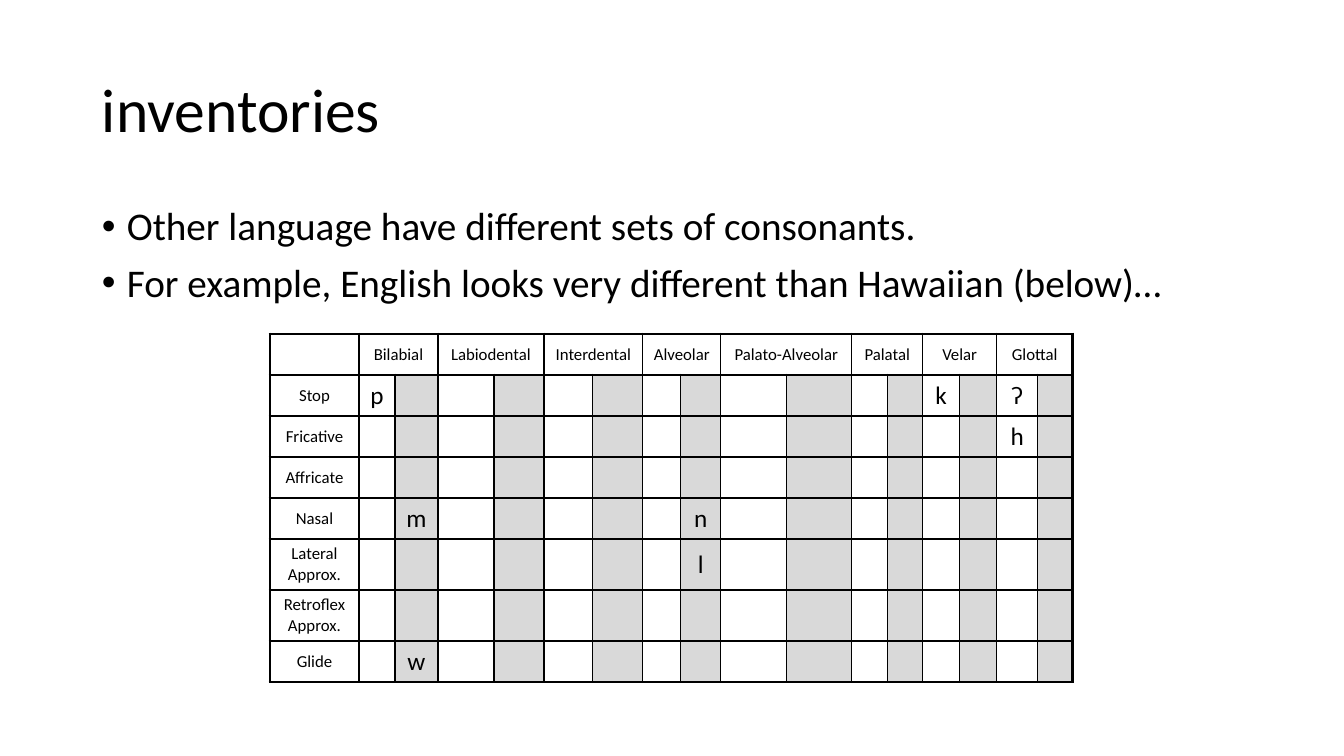
"""Build the consonant inventories slide with its Hawaiian consonant table."""
from lxml.etree import SubElement
from pptx import Presentation
from pptx.dml.color import RGBColor
from pptx.enum.text import MSO_ANCHOR as Anchor, PP_ALIGN as Align
from pptx.oxml.ns import qn
from pptx.util import Pt

PX = 9144000 / 1008
BLACK = RGBColor(0x00, 0x00, 0x00)
GREY = RGBColor(0xD9, 0xD9, 0xD9)

PLACES = ["Bilabial", "Labiodental", "Interdental", "Alveolar",
          "Palato-Alveolar", "Palatal", "Velar", "Glottal"]
MANNERS = ["Stop", "Fricative", "Affricate", "Nasal",
           "Lateral Approx.", "Retroflex Approx.", "Glide"]
SOUNDS = {(1, 1): "p", (1, 13): "k", (1, 15): "ʔ", (2, 15): "h",
          (4, 2): "m", (4, 8): "n", (5, 8): "l", (7, 2): "w"}
WIDTHS = [89, 36, 43, 56, 50, 49, 50, 38, 40, 66, 65, 36, 35, 37, 37, 41, 35]
HEIGHTS = [41, 41, 41, 41, 41, 51, 51, 41]


def px(*nums):
    return [round(num * PX) for num in nums]


def write(para, text, size, align=Align.LEFT, line=None, before=0, bullet=None):
    para.alignment = align
    para.line_spacing = line
    para.space_before = Pt(before)
    if bullet:
        props = para._p.get_or_add_pPr()
        indent, = px(25)
        props.set("marL", str(indent))
        props.set("indent", str(-indent))
        SubElement(props, qn("a:buFont"), typeface="Arial")
        SubElement(props, qn("a:buChar"), char=bullet)
    run = para.add_run()
    run.text = text
    font = run.font
    font.name, font.size, font.bold = "Calibri", Pt(size), False
    font.color.rgb = BLACK


deck = Presentation()
deck.slide_width, deck.slide_height = px(1344, 756)
slide = deck.slides.add_slide(deck.slide_layouts[6])
shapes = slide.shapes

title = shapes.add_textbox(*px(92, 40, 1159, 146)).text_frame
title.word_wrap = True
title.vertical_anchor = Anchor.MIDDLE
write(title.paragraphs[0], "inventories", 44, line=0.9)

body = shapes.add_textbox(*px(92, 202, 1159, 480)).text_frame
body.word_wrap = True
points = ["Other language have different sets of consonants.",
          "For example, English looks very different than Hawaiian (below)…"]
for num, point in enumerate(points):
    para = body.add_paragraph() if num else body.paragraphs[0]
    write(para, point, 28, line=0.9, before=10, bullet="•")

rows, cols = len(HEIGHTS), len(WIDTHS)
table = shapes.add_table(
    rows, cols, *px(270, 334, sum(WIDTHS), sum(HEIGHTS))).table
table.first_row = table.horz_banding = False
for col, width in zip(table.columns, WIDTHS):
    col.width, = px(width)
for row, height in zip(table.rows, HEIGHTS):
    row.height, = px(height)

labels = {(num, 0): name for num, name in enumerate(MANNERS, 1)}
for num, place in enumerate(PLACES):
    left = 2 * num + 1
    labels[0, left] = place
    table.cell(0, left).merge(table.cell(0, left + 1))

for r in range(rows):
    for c in range(cols):
        cell = table.cell(r, c)
        if cell.is_spanned:
            continue
        cell.vertical_anchor = Anchor.MIDDLE
        spot = r, c
        para = cell.text_frame.paragraphs[0]
        if spot in labels:
            write(para, labels[spot], 12, align=Align.CENTER)
        elif spot in SOUNDS:
            write(para, SOUNDS[spot], 18, align=Align.CENTER)
        else:
            para.font.size = Pt(18)

        right = c + (cell.span_width if cell.is_merge_origin else 1)
        edges = {"L": c in (0, 1), "R": right in (1, cols),
                 "T": r in (0, 1), "B": r + 1 in (1, rows)}
        props = cell._tc.get_or_add_tcPr()
        for side, thick in edges.items():
            line = SubElement(props, qn(f"a:ln{side}"),
                              w=str(Pt(2.25 if thick else 1)))
            paint = SubElement(line, qn("a:solidFill"))
            SubElement(paint, qn("a:srgbClr"), val=str(BLACK))
        if r and c and c % 2 == 0:
            cell.fill.solid()
            cell.fill.fore_color.rgb = GREY
        else:
            cell.fill.background()

deck.save("out.pptx")
